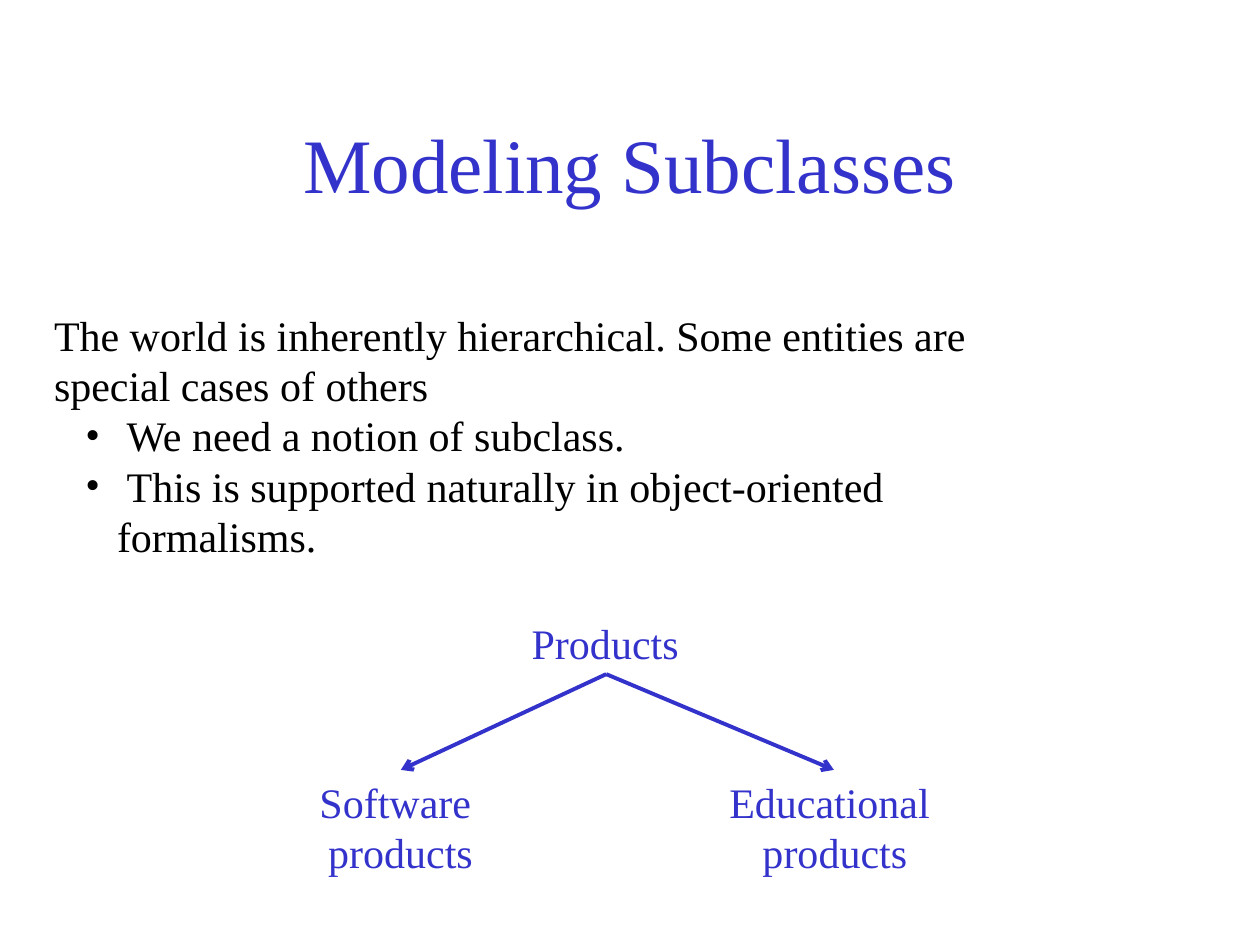
from lxml.etree import SubElement
from pptx import Presentation
from pptx.dml.color import RGBColor
from pptx.enum.shapes import MSO_CONNECTOR
from pptx.enum.text import MSO_ANCHOR, PP_ALIGN
from pptx.oxml.ns import qn
from pptx.util import Cm, Pt

BLUE = "3333CC"
BLACK = "000000"


def color(hex_string):
    return RGBColor.from_string(hex_string)


def add_text(left, top, width, height, lines, size=24, fill=BLUE,
             align=PP_ALIGN.CENTER, anchor=MSO_ANCHOR.TOP, wrap=False):
    """Add a text box with one paragraph per line; lengths in centimetres."""
    shape = slide.shapes.add_textbox(Cm(left), Cm(top), Cm(width), Cm(height))
    frame = shape.text_frame
    frame.word_wrap = wrap
    frame.vertical_anchor = anchor
    frame.text = "\n".join(lines)
    for paragraph in frame.paragraphs:
        paragraph.alignment = align
        font = paragraph.runs[0].font
        font.name = "Times New Roman"
        font.size = Pt(size)
        font.color.rgb = color(fill)
    return frame


presentation = Presentation()
presentation.slide_width = Cm(25.4)
presentation.slide_height = Cm(19.05)
slide = presentation.slides.add_slide(presentation.slide_layouts[6])

add_text(1.9, 1.7, 21.59, 3.18, ["Modeling Subclasses"], size=44,
         anchor=MSO_ANCHOR.MIDDLE, wrap=True)

body = add_text(0.84, 5.08, 20.78, 6.35, [
    "The world is inherently hierarchical. Some entities are special cases of others",
    " We need a notion of subclass.",
    " This is supported naturally in object-oriented formalisms.",
], fill=BLACK, align=PP_ALIGN.LEFT, wrap=True)
body.margin_top = Cm(1.15)
for paragraph in body.paragraphs[1:]:
    paragraph.level = 1
    properties = paragraph._p.get_or_add_pPr()
    properties.set("marL", str(Cm(1.27)))
    properties.set("indent", str(-Cm(0.64)))
    SubElement(properties, qn("a:buFont"), typeface="Times New Roman")
    SubElement(properties, qn("a:buChar"), char="•")

# Class tree: the parent above its two subclasses
add_text(10.46, 12.32, 3.48, 1.27, ["Products"])
add_text(6.17, 15.52, 3.81, 2.31, ["Software ", "products"])
add_text(14.43, 15.52, 4.8, 2.31, ["Educational ", "products"])

for arrow_end in (8.08, 16.81):
    arrow = slide.shapes.add_connector(
        MSO_CONNECTOR.STRAIGHT, Cm(12.22), Cm(13.59), Cm(arrow_end), Cm(15.52))
    arrow.line.color.rgb = color(BLUE)
    arrow.line.width = Pt(2.25)
    SubElement(arrow.line._get_or_add_ln(), qn("a:tailEnd"), type="arrow")
    SubElement(arrow._element.spPr, qn("a:effectLst"))

presentation.save("out.pptx")
